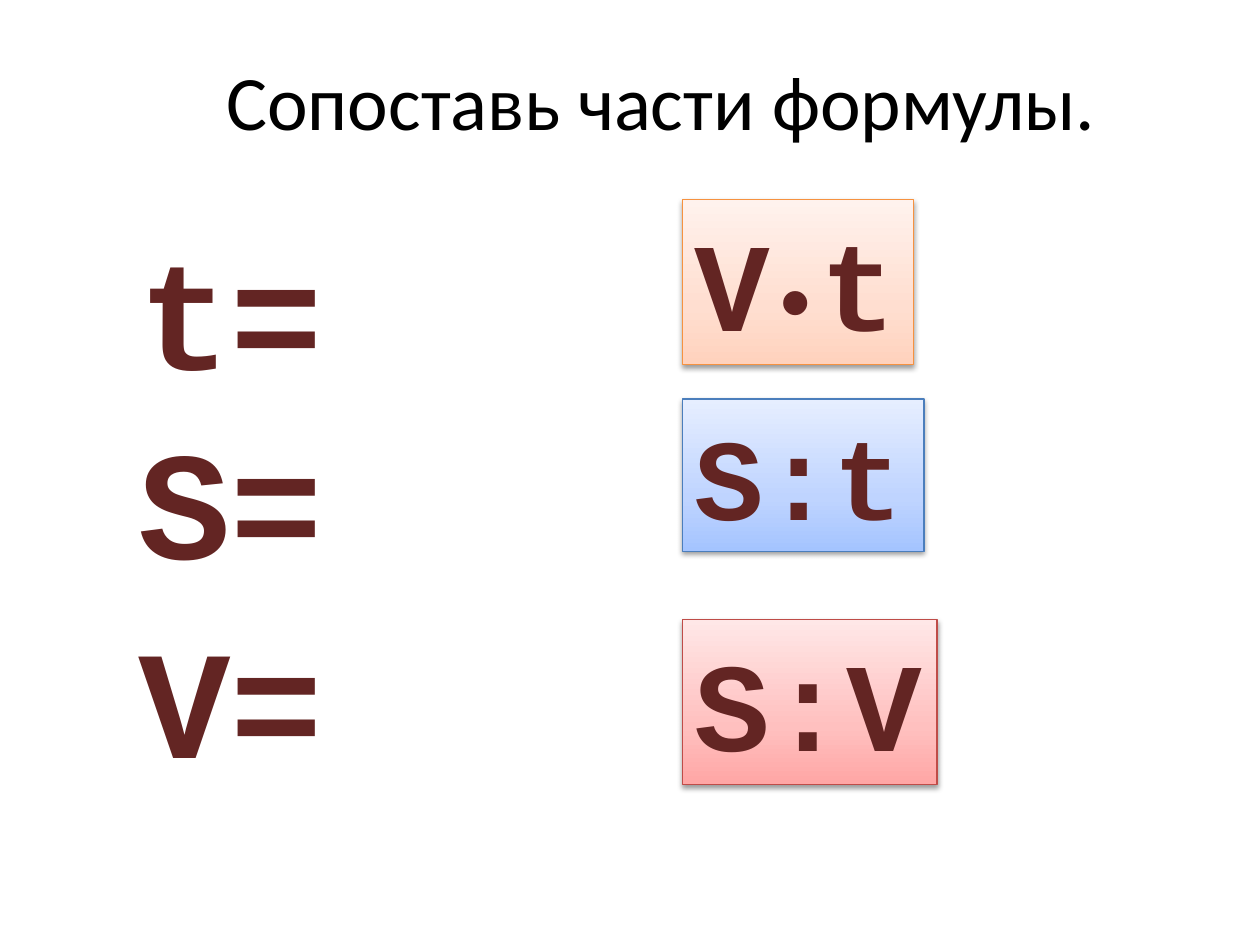
from copy import deepcopy

from lxml import etree
from pptx import Presentation
from pptx.dml.color import RGBColor
from pptx.enum.shapes import MSO_SHAPE
from pptx.enum.text import MSO_ANCHOR, MSO_AUTO_SIZE, PP_ALIGN
from pptx.oxml.ns import qn
from pptx.util import Pt

RECT = MSO_SHAPE.RECTANGLE
TOP, MIDDLE = MSO_ANCHOR.TOP, MSO_ANCHOR.MIDDLE
LEFT, CENTER = PP_ALIGN.LEFT, PP_ALIGN.CENTER
GROW = MSO_AUTO_SIZE.SHAPE_TO_FIT_TEXT

THEME = {
    "title_font": "Calibri", "formula_font": "Courier New",
    "title": "000000", "formula": "632523", "shadow": "000000",
    "title_size": 44, "left_size": 88,
    "orange": ("F69240", ["FFD2BD", "FFDED0", "FFF2ED"]),
    "blue": ("4B7EBC", ["A4C4FF", "BFD4FF", "E6EEFF"]),
    "red": ("BF4C48", ["FFA6A5", "FFC0BF", "FFE7E7"]),
}
STOPS = (0, 0.35, 1)

TITLE = "Сопоставь части формулы."
# text, top
LEFT_PARTS = [("t=", 120), ("S=", 228), ("V=", 342)]
# (text, size) runs, top, width, height, palette
RIGHT_PARTS = [
    ([("V", 72), ("•", 48), ("t", 72)], 114, 132, 94.5, "orange"),
    ([("S:t", 66)], 228, 138, 87, "blue"),
    ([("S:V", 72)], 354, 145.5, 94.5, "red"),
]
LEFT_X, RIGHT_X = 72, 390


def put_text(s, runs, font=THEME["formula_font"], color=THEME["formula"],
             bold=True, align=LEFT, anchor=TOP, wrap=False, grow=True):
    """Fill a shape with one paragraph of (text, size) runs."""
    tf = s.text_frame
    tf.word_wrap, tf.vertical_anchor = wrap, anchor
    if grow:
        tf.auto_size = GROW
    p = tf.paragraphs[0]
    p.alignment = align
    for text, size in runs:
        r = p.add_run()
        r.text = text
        r.font.name, r.font.size, r.font.bold = font, Pt(size), bold
        r.font.color.rgb = RGBColor.from_string(color)


def fill_gradient(s, colors):
    """Three-stop gradient running from the bottom edge to the top."""
    s.fill.gradient()
    s.fill.gradient_angle = 90
    stop_list = s._element.spPr.find(".//" + qn("a:gsLst"))
    stop_list.insert(1, deepcopy(stop_list[0]))
    for stop, color, position in zip(s.fill.gradient_stops, colors, STOPS):
        stop.color.rgb = RGBColor.from_string(color)
        stop.position = position


def add_shadow(s):
    s.shadow.inherit = False
    effects = s._element.spPr.find(qn("a:effectLst"))
    shadow = etree.SubElement(
        effects, qn("a:outerShdw"), blurRad=str(Pt(3.1)), dist=str(Pt(1.6)),
        dir="5400000", rotWithShape="0")
    color = etree.SubElement(shadow, qn("a:srgbClr"), val=THEME["shadow"])
    etree.SubElement(color, qn("a:alpha"), val="38000")


def main():
    prs = Presentation()
    prs.slide_width, prs.slide_height = Pt(720), Pt(540)
    shapes = prs.slides.add_slide(prs.slide_layouts[6]).shapes

    title = shapes.add_textbox(Pt(36), Pt(24), Pt(684), Pt(66))
    put_text(title, [(TITLE, THEME["title_size"])], font=THEME["title_font"],
             color=THEME["title"], bold=False, align=CENTER, anchor=MIDDLE,
             wrap=True, grow=False)

    for text, top in LEFT_PARTS:
        s = shapes.add_textbox(Pt(LEFT_X), Pt(top), Pt(121), Pt(114))
        put_text(s, [(text, THEME["left_size"])])

    for runs, top, width, height, palette in RIGHT_PARTS:
        line_color, fill_colors = THEME[palette]
        s = shapes.add_shape(RECT, Pt(RIGHT_X), Pt(top), Pt(width), Pt(height))
        fill_gradient(s, fill_colors)
        s.line.color.rgb = RGBColor.from_string(line_color)
        s.line.width = Pt(0.75)
        add_shadow(s)
        put_text(s, runs)

    prs.save("out.pptx")


if __name__ == "__main__":
    main()
